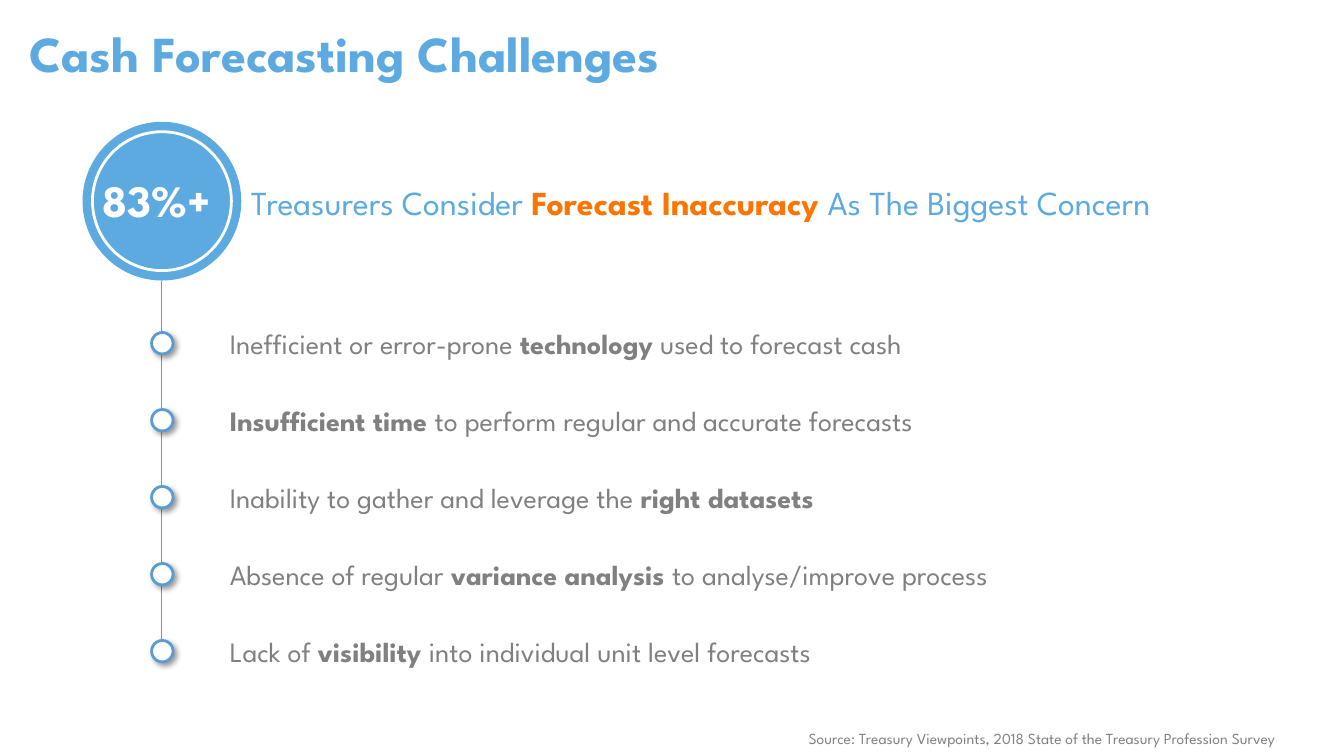
from dataclasses import dataclass

from lxml import etree
from pptx import Presentation
from pptx import util as u
from pptx.dml.color import RGBColor
from pptx.enum import shapes, text
from pptx.oxml import ns


@dataclass(frozen=True)
class Theme:
    font: str = "League Spartan"
    sky: str = "5DAAE0"
    line: str = "5B9BD5"
    hot: str = "FC7500"
    gray: str = "808080"
    white: str = "FFFFFF"
    title: int = 36
    stat: int = 32
    lead: int = 24
    body: int = 20
    note: int = 11


class Page:
    def __init__(self, deck, theme):
        self.theme = theme
        self.slide = deck.slides.add_slide(deck.slide_layouts[5])

    def place(self, shape, box):
        shape.left, shape.top, shape.width, shape.height = map(u.Cm, box)

    def fill_text(self, frame, size, runs):
        para = frame.paragraphs[0]
        para.alignment = text.PP_ALIGN.LEFT
        for words, color, bold in runs:
            run = para.add_run()
            run.text = words
            run.font.name = self.theme.font
            run.font.size = u.Pt(size)
            run.font.bold = bold
            run.font.color.rgb = RGBColor.from_string(color)
        return para

    def title(self, box, words):
        shape = self.slide.shapes.title
        self.place(shape, box)
        frame = shape.text_frame
        frame.vertical_anchor = text.MSO_ANCHOR.MIDDLE
        frame.auto_size = text.MSO_AUTO_SIZE.NONE
        para = self.fill_text(frame, self.theme.title,
                              [(words, self.theme.sky, True)])
        para.line_spacing = 0.9

    def label(self, box, size, runs):
        frame = self.slide.shapes.add_textbox(*map(u.Cm, box)).text_frame
        frame.word_wrap = True
        self.fill_text(frame, size, runs)

    def disc(self, box, fill=None, line=None, shade=False):
        shape = self.slide.shapes.add_shape(
            shapes.MSO_SHAPE.OVAL, *map(u.Cm, box))
        shape.shadow.inherit = False
        if fill:
            shape.fill.solid()
            shape.fill.fore_color.rgb = RGBColor.from_string(fill)
        else:
            shape.fill.background()
        if line:
            shape.line.color.rgb = RGBColor.from_string(line)
            shape.line.width = u.Pt(2)
        else:
            shape.line.fill.background()
        if shade:
            self.shade(shape)

    def shade(self, shape):
        effects = shape._element.spPr.find(ns.qn("a:effectLst"))
        outer = etree.SubElement(
            effects, ns.qn("a:outerShdw"), blurRad=str(u.Pt(4)),
            dist=str(u.Pt(3)), dir=str(45 * 60000), algn="tl", rotWithShape="0")
        color = etree.SubElement(outer, ns.qn("a:srgbClr"), val="000000")
        etree.SubElement(color, ns.qn("a:alpha"), val="40000")

    def stem(self, x, top, end):
        line = self.slide.shapes.add_connector(
            shapes.MSO_CONNECTOR.STRAIGHT, u.Cm(x), u.Cm(top), u.Cm(x), u.Cm(end))
        line.line.color.rgb = RGBColor.from_string(self.theme.line)
        line.line.width = u.Pt(0.75)
        etree.SubElement(line._element.spPr, ns.qn("a:effectLst"))


def main():
    deck = Presentation()
    deck.slide_width, deck.slide_height = u.Inches(13.33), u.Inches(7.5)
    theme = Theme()
    page = Page(deck, theme)
    page.title((0.48, 0.15, 29.92, 2.54), "Cash Forecasting Challenges")

    page.label((6.07, 4.45, 27.8, 1.27), theme.lead, [
        ("Treasurers Consider ", theme.sky, False),
        ("Forecast Inaccuracy ", theme.hot, True),
        ("As The Biggest Concern", theme.sky, False),
    ])

    page.disc((2.08, 3.07, 4, 4), fill=theme.sky)
    page.label((2.34, 4.22, 3.45, 1.63), theme.stat, [("83%+", theme.white, True)])
    page.disc((2.33, 3.32, 3.5, 3.5), line=theme.white)

    causes = [
        [("Inefficient or error-prone ", False), ("technology", True),
         (" used to forecast cash", False)],
        [("Insufficient time ", True),
         ("to perform regular and accurate forecasts", False)],
        [("Inability to gather and leverage the ", False), ("right datasets", True)],
        [("Absence of regular ", False), ("variance analysis ", True),
         ("to analyse/improve process", False)],
        [("Lack of ", False), ("visibility ", True),
         ("into individual unit level forecasts", False)],
    ]
    top, step, dot = 8.1, 1.94, 0.54
    page.stem(4.08, 7.07, 16.36)
    for row, parts in enumerate(causes):
        y = top + row * step
        page.disc((3.82, y + 0.28, dot, dot), theme.white, theme.line, True)
        page.label((5.54, y, 23.2, 1.11), theme.body,
                   [(words, theme.gray, bold) for words, bold in parts])

    page.label((20.12, 18.26, 16.94, 0.73), theme.note, [
        ("Source: Treasury Viewpoints, 2018 State of the Treasury Profession Survey",
         theme.gray, False)])
    deck.save("out.pptx")


if __name__ == "__main__":
    main()
